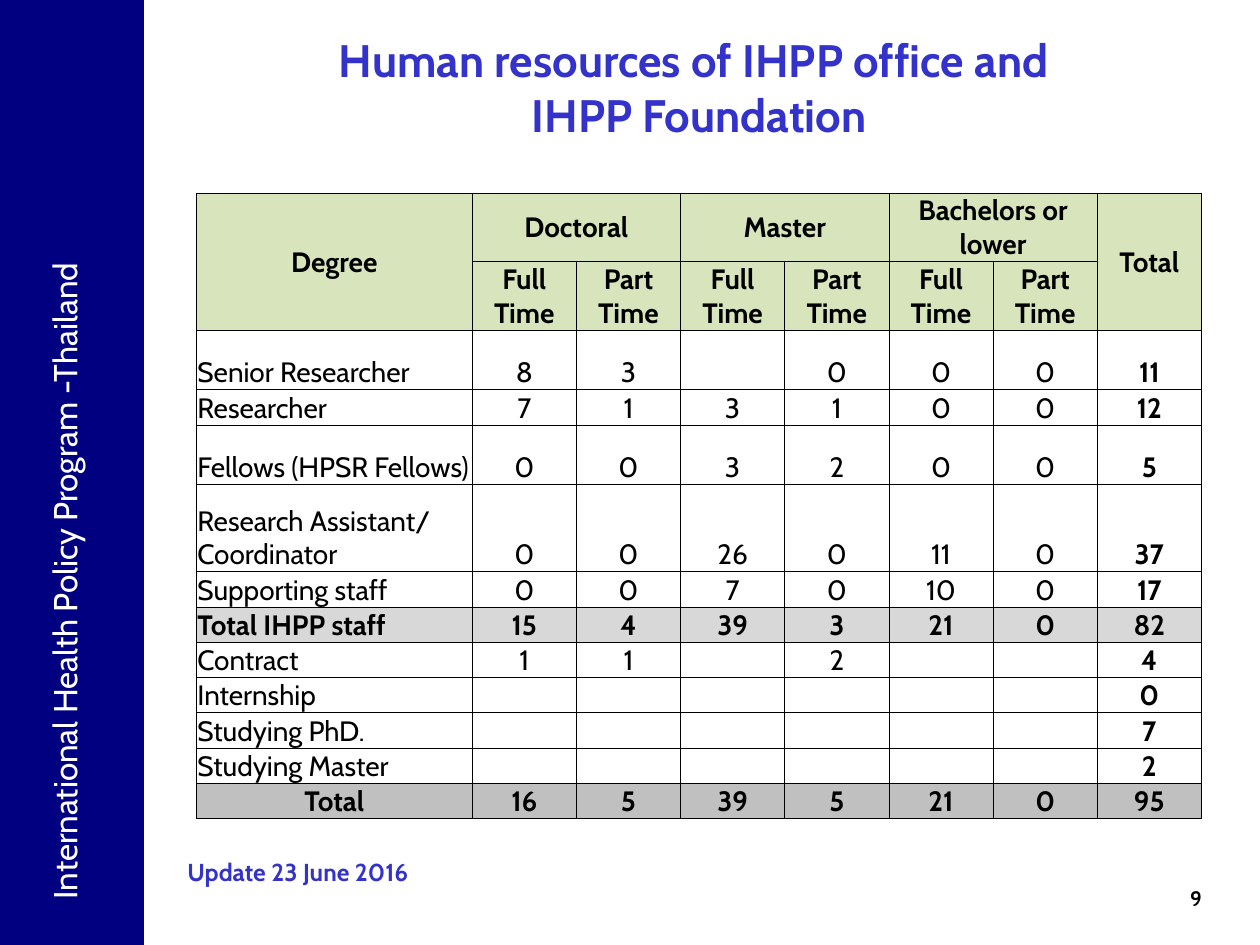
from lxml import etree
from pptx import Presentation
from pptx import util as u
from pptx.dml.color import RGBColor
from pptx.enum import shapes, text
from pptx.oxml import ns

NAVY = RGBColor(0x00, 0x00, 0x80)
BLUE = RGBColor(0x33, 0x33, 0xCC)
BLACK = RGBColor(0x00, 0x00, 0x00)
WHITE = RGBColor(0xFF, 0xFF, 0xFF)
GREEN = RGBColor(0xD7, 0xE4, 0xBC)
SILVER = RGBColor(0xD8, 0xD8, 0xD8)
GREY = RGBColor(0xC0, 0xC0, 0xC0)

LEFT, MID, RIGHT = text.PP_ALIGN.LEFT, text.PP_ALIGN.CENTER, text.PP_ALIGN.RIGHT
TOP, HALF, BASE = text.MSO_ANCHOR.TOP, text.MSO_ANCHOR.MIDDLE, text.MSO_ANCHOR.BOTTOM

HEADS = ["Degree", "Doctoral", "", "Master", "", "Bachelors or lower", "", "Total"]
TIMES = [""] + ["Full Time", "Part Time"] * 3 + [""]
STAFF = [
    ["Senior Researcher", "8", "3", "", "0", "0", "0", "11"],
    ["Researcher", "7", "1", "3", "1", "0", "0", "12"],
    ["Fellows (HPSR Fellows)", "0", "0", "3", "2", "0", "0", "5"],
    ["Research Assistant/ Coordinator", "0", "0", "26", "0", "11", "0", "37"],
    ["Supporting staff", "0", "0", "7", "0", "10", "0", "17"],
    ["Total IHPP staff", "15", "4", "39", "3", "21", "0", "82"],
    ["Contract", "1", "1", "", "2", "", "", "4"],
    ["Internship", "", "", "", "", "", "", "0"],
    ["Studying PhD.", "", "", "", "", "", "", "7"],
    ["Studying Master", "", "", "", "", "", "", "2"],
    ["Total", "16", "5", "39", "5", "21", "0", "95"],
]
WIDTHS = [5.56] + [2.1] * 7
HEIGHTS = [1.39, 1.39, 1.19, 0.71, 1.19, 1.77] + [0.71] * 7
SPANS = [(0, 0, 1, 0), (0, 1, 0, 2), (0, 3, 0, 4), (0, 5, 0, 6), (0, 7, 1, 7)]
SUMS = {"Total IHPP staff": SILVER, "Total": GREY}


def write(frame, words, face="Cabin", size=16, color=BLACK, bold=False, align=LEFT):
    para = frame.paragraphs[0]
    para.alignment = align
    if not words:
        etree.SubElement(para._p, ns.qn("a:endParaRPr"), sz=str(size * 100))
        return
    para.text = words
    for run in para.runs:
        run.font.name = face
        run.font.size = u.Pt(size)
        run.font.bold = bold
        run.font.color.rgb = color


def edge(cell):
    props = cell._tc.get_or_add_tcPr()
    for spot, side in enumerate(("lnL", "lnR", "lnT", "lnB")):
        line = etree.Element(ns.qn(f"a:{side}"), w=str(u.Pt(0.5)))
        fill = etree.SubElement(line, ns.qn("a:solidFill"))
        etree.SubElement(fill, ns.qn("a:srgbClr"), val=str(BLACK))
        props.insert(spot, line)


class Deck:
    def __init__(self, face):
        self.face = face
        self.show = Presentation()
        self.show.slide_width = u.Cm(25.4)
        self.show.slide_height = u.Cm(19.05)
        self.slide = self.show.slides.add_slide(self.show.slide_layouts[6])

    def band(self, area, color):
        shape = self.slide.shapes.add_shape(
            shapes.MSO_SHAPE.RECTANGLE, *map(u.Cm, area))
        shape.shadow.inherit = False
        shape.fill.solid()
        shape.fill.fore_color.rgb = color
        shape.line.fill.background()

    def label(self, area, words, anchor=HALF, turn=None, **style):
        frame = self.slide.shapes.add_textbox(*map(u.Cm, area)).text_frame
        frame.word_wrap = True
        frame.vertical_anchor = anchor
        if turn:
            frame._txBody.bodyPr.set("vert", turn)
            frame.margin_left = frame.margin_right = 0
            frame.margin_top = frame.margin_bottom = 0
        write(frame, words, face=self.face, **style)

    def cell(self, cell, words, fill, anchor, **style):
        cell.margin_left = cell.margin_right = cell.margin_top = u.Cm(0.02)
        cell.margin_bottom = 0
        cell.vertical_anchor = anchor
        if fill is None:
            cell.fill.background()
        else:
            cell.fill.solid()
            cell.fill.fore_color.rgb = fill
        edge(cell)
        write(cell.text_frame, words, face=self.face, **style)

    def table(self, left, top):
        rows = [HEADS, TIMES] + STAFF
        area = (left, top, sum(WIDTHS), sum(HEIGHTS))
        grid = self.slide.shapes.add_table(
            len(rows), len(WIDTHS), *map(u.Cm, area)).table
        grid.first_row = grid.horz_banding = False
        for col, width in zip(grid.columns, WIDTHS):
            col.width = u.Cm(width)
        for row, height in zip(grid.rows, HEIGHTS):
            row.height = u.Cm(height)
        for r, row in enumerate(rows):
            head = r < 2
            fill = GREEN if head else SUMS.get(row[0])
            for c, words in enumerate(row):
                name = c == 0 and not head and words != "Total"
                self.cell(grid.cell(r, c), words, fill, HALF if head else BASE,
                          bold=fill is not None or c == 7,
                          align=LEFT if name else MID)
        for r, c, low, last in SPANS:
            grid.cell(r, c).merge(grid.cell(low, last))


def main():
    deck = Deck("Cabin")
    deck.band((0, 0, 2.9, 19.05), NAVY)
    deck.label((0.89, 3.33, 0.81, 14.8), "International Health Policy Program -Thailand",
               turn="vert270", size=19, color=WHITE)
    deck.label((3.3, 0.71, 21.59, 2.08),
               "Human resources of IHPP office and \vIHPP Foundation",
               size=26, color=BLUE, bold=True, align=MID)
    deck.label((19.2, 17.73, 5.28, 0.89), "9", anchor=TOP,
               size=12, bold=True, align=RIGHT)
    deck.label((3.53, 16.87, 10.19, 1.4), "Update 23 June 2016",
               size=14, color=BLUE, bold=True)
    deck.table(3.96, 3.89)
    deck.show.save("out.pptx")


if __name__ == "__main__":
    main()
